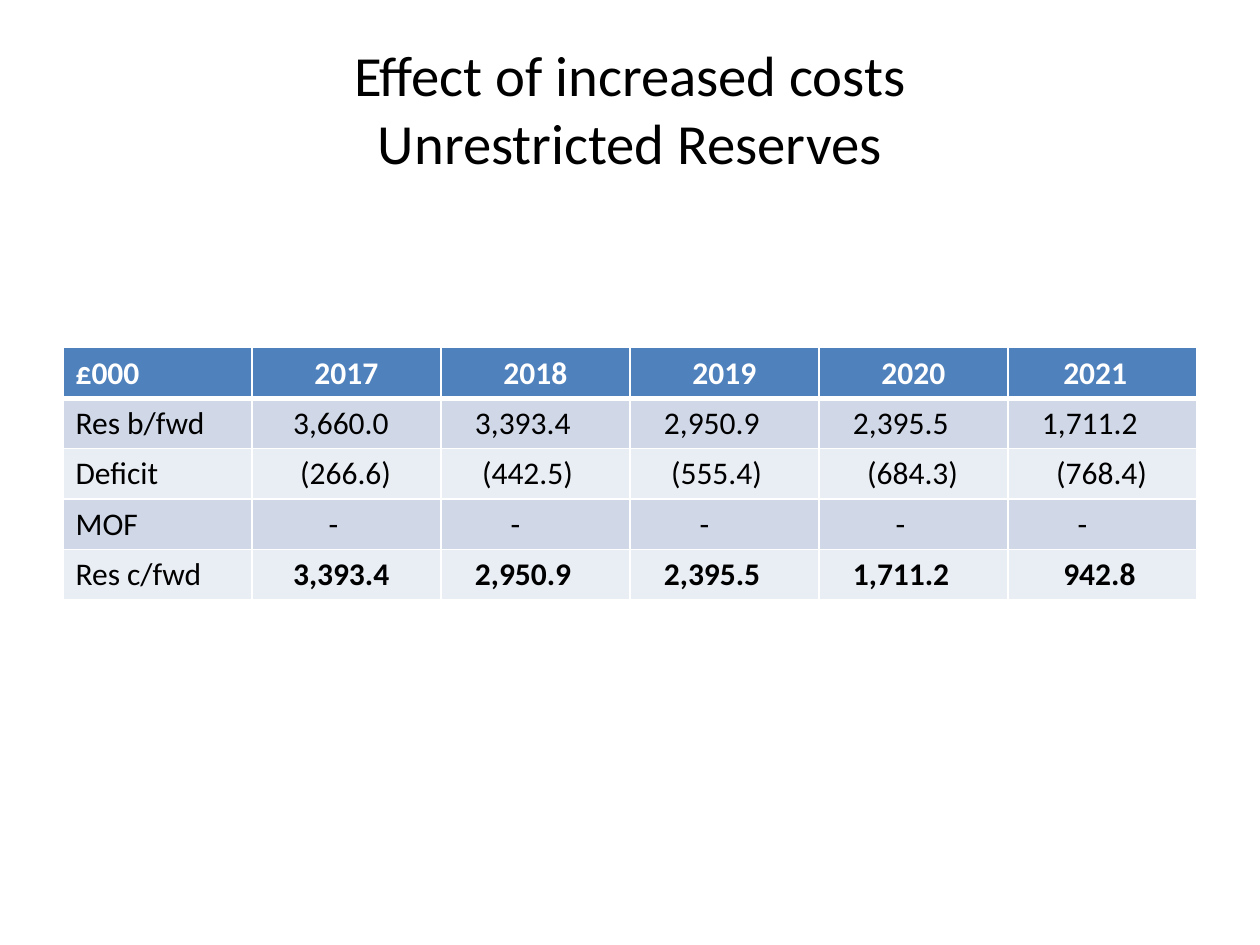
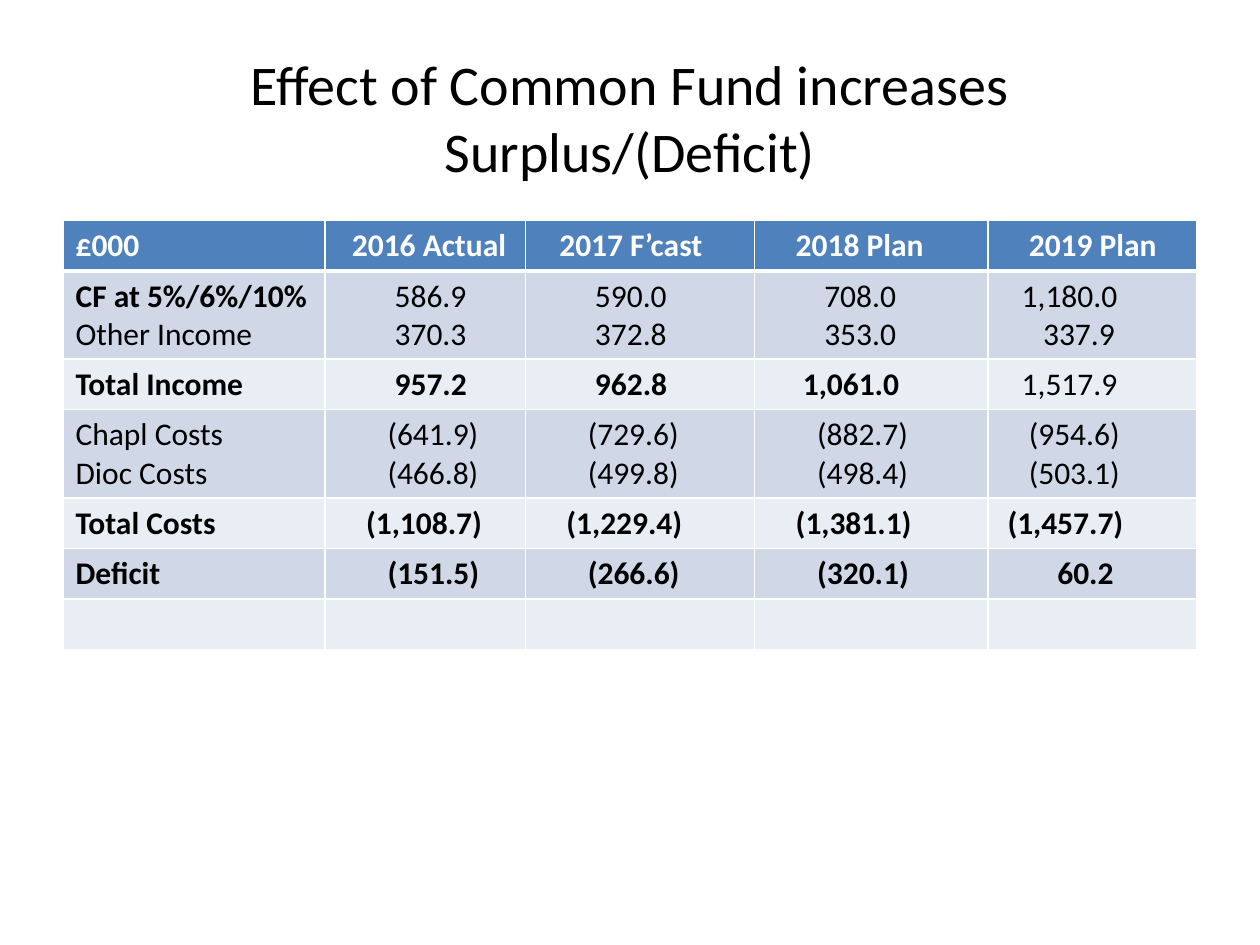
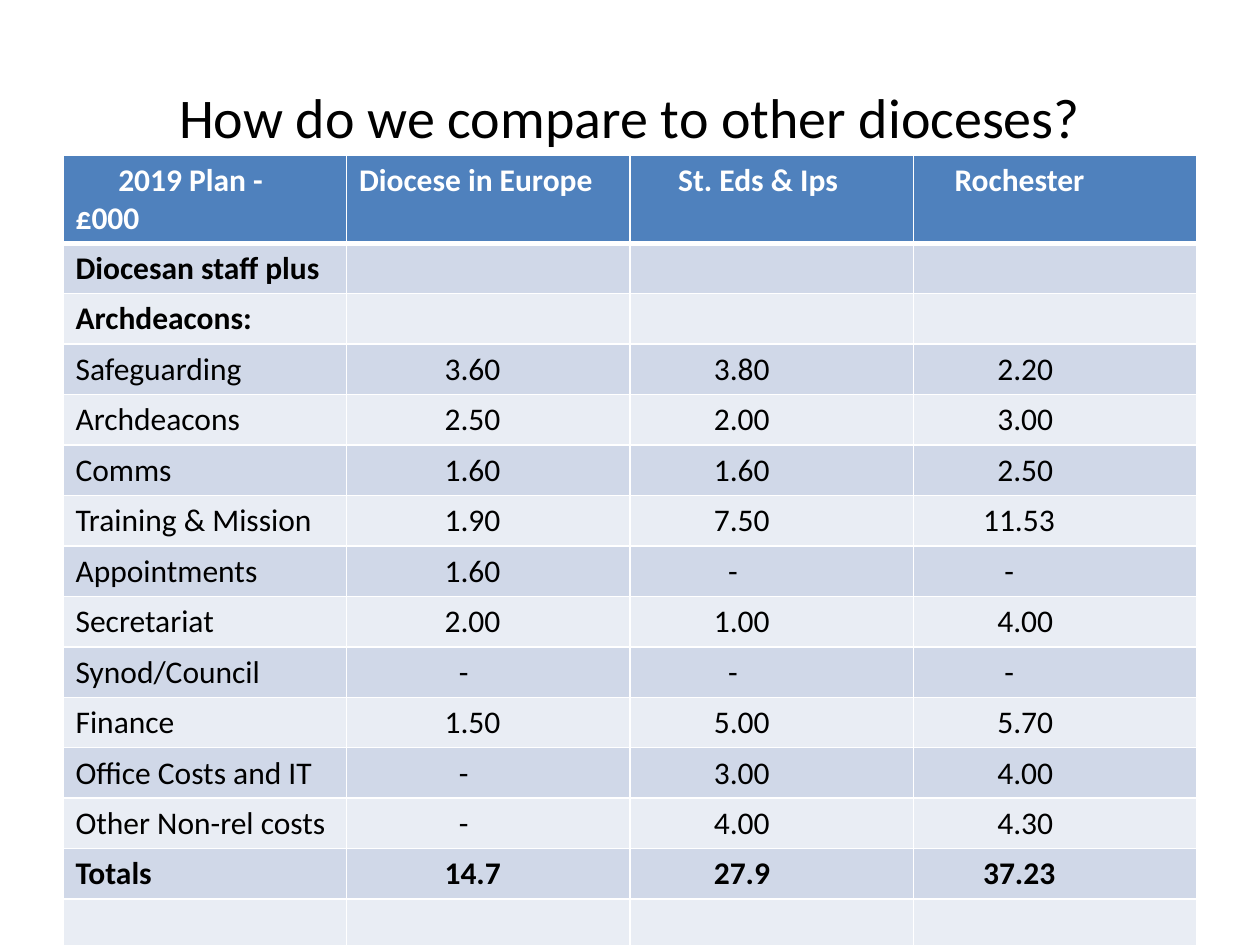
"""Build three finance slides: reserves, surplus or deficit, and a comparison of dioceses."""
import pptx
import pptx.util
import pptx.dml.color
import pptx.enum.text
import pptx.oxml.ns
import lxml.etree

Inches = pptx.util.Inches
Pt = pptx.util.Pt
RGB = pptx.dml.color.RGBColor

BLACK = RGB(0x00, 0x00, 0x00)
WHITE = RGB(0xFF, 0xFF, 0xFF)
BLUE = RGB(0x4F, 0x81, 0xBD)
BANDS = [RGB(0xE9, 0xED, 0xF4), RGB(0xD0, 0xD8, 0xE8)]
FONT = "Calibri"
STEP = Pt(4.07)
LINE = 0.3


def style(para, size, color, bold=False):
    para.font.name = FONT
    para.font.size = Pt(size)
    para.font.color.rgb = color
    para.font.bold = bold


def border(cell, side, width):
    props = cell._tc.get_or_add_tcPr()
    line = lxml.etree.SubElement(props, pptx.oxml.ns.qn("a:" + side), w=str(Pt(width)))
    fill = lxml.etree.SubElement(line, pptx.oxml.ns.qn("a:solidFill"))
    lxml.etree.SubElement(fill, pptx.oxml.ns.qn("a:srgbClr"), val=str(WHITE))


# Each row holds lines of (bold flags, indent steps, cell texts).
SLIDES = [
    {
        "title": "Effect of increased costs\vUnrestricted Reserves",
        "size": 32.4, "rise": 0.07, "top": 2.76, "cols": [1.5] * 6,
        "rows": [
            [("111111", [0, 7, 7, 7, 7, 6], "£000|2017|2018|2019|2020|2021")],
            [("000000", [0, 4, 3, 3, 3, 3], "Res b/fwd|3,660.0|3,393.4|2,950.9|2,395.5|1,711.2")],
            [("000000", [0, 5, 4, 4, 5, 5], "Deficit|(266.6)|(442.5)|(555.4)|(684.3)|(768.4)")],
            [("000000", [0, 9, 8, 8, 9, 8], "MOF|-|-|-|-|-")],
            [("011111", [0, 4, 3, 3, 3, 6], "Res c/fwd|3,393.4|2,950.9|2,395.5|1,711.2|942.8")],
        ],
    },
    {
        "title": "Effect of Common Fund increases\vSurplus/(Deficit)",
        "size": 32, "rise": 0, "top": 1.75, "cols": [2.08, 1.59, 1.82, 1.85, 1.66],
        "rows": [
            [("11111", [0, 2, 3, 4, 4], "£000|2016 Actual|2017 F’cast|2018 Plan|2019 Plan")],
            [("10000", [0, 8, 8, 8, 3], "CF at 5%/6%/10%|586.9|590.0|708.0|1,180.0"),
             ("00000", [0, 8, 8, 8, 6], "Other Income|370.3|372.8|353.0|337.9")],
            [("11110", [0, 8, 8, 5, 3], "Total Income|957.2|962.8|1,061.0|1,517.9")],
            [("00000", [0, 7, 7, 7, 4], "Chapl Costs|(641.9)|(729.6)|(882.7)|(954.6)"),
             ("00000", [0, 7, 7, 7, 4], "Dioc Costs|(466.8)|(499.8)|(498.4)|(503.1)")],
            [("11111", [0, 4, 4, 4, 1], "Total Costs|(1,108.7)|(1,229.4)|(1,381.1)|(1,457.7)")],
            [("11111", [0, 7, 7, 7, 8], "Deficit|(151.5)|(266.6)|(320.1)|60.2")],
            [("00000", [0] * 5, "||||")],
        ],
    },
    {
        "title": "How do we compare to other dioceses?",
        "size": 32, "rise": 0, "top": 1.23, "cols": [2.25] * 4,
        "rows": [
            [("1111", [6, 0, 5, 4], "2019 Plan - £000|Diocese in Europe|St. Eds & Ips|Rochester")],
            [("1000", [0] * 4, "Diocesan staff plus|||")],
            [("1000", [0] * 4, "Archdeacons:|||")],
            [("0000", [0, 12, 10, 10], "Safeguarding|3.60|3.80|2.20")],
            [("0000", [0, 12, 10, 10], "Archdeacons|2.50|2.00|3.00")],
            [("0000", [0, 12, 10, 10], "Comms|1.60|1.60|2.50")],
            [("0000", [0, 12, 10, 8], "Training & Mission|1.90|7.50|11.53")],
            [("0000", [0, 12, 12, 11], "Appointments|1.60|-|-")],
            [("0000", [0, 12, 10, 10], "Secretariat|2.00|1.00|4.00")],
            [("0000", [0, 14, 12, 11], "Synod/Council|-|-|-")],
            [("0000", [0, 12, 10, 10], "Finance|1.50|5.00|5.70")],
            [("0000", [0, 14, 10, 10], "Office Costs and IT|-|3.00|4.00")],
            [("0000", [0, 14, 10, 10], "Other Non-rel costs|-|4.00|4.30")],
            [("1111", [0, 12, 10, 8], "Totals|14.7|27.9|37.23")],
            [("0000", [0] * 4, "|||")],
        ],
    },
]

deck = pptx.Presentation()
deck.slide_width = Inches(10)
deck.slide_height = Inches(7.5)

for data in SLIDES:
    slide = deck.slides.add_slide(deck.slide_layouts[6])
    title = slide.shapes.add_textbox(Inches(0.5), Inches(0.3 - data["rise"]), Inches(9), Inches(1.25))
    frame = title.text_frame
    frame.word_wrap = True
    frame.vertical_anchor = pptx.enum.text.MSO_ANCHOR.MIDDLE
    frame.text = data["title"]
    frame.paragraphs[0].alignment = pptx.enum.text.PP_ALIGN.CENTER
    style(frame.paragraphs[0], data["size"], BLACK)

    rows, cols = data["rows"], data["cols"]
    tall = [0.1 + LINE * len(lines) for lines in rows]
    table = slide.shapes.add_table(len(rows), len(cols), Inches(0.5), Inches(data["top"]),
                                   Inches(9), Inches(sum(tall))).table
    for col, width in zip(table.columns, cols):
        col.width = Inches(width)
    for r, lines in enumerate(rows):
        table.rows[r].height = Inches(tall[r])
        for c in range(len(cols)):
            cell = table.cell(r, c)
            cell.text = "\n".join(text.split("|")[c] for _, _, text in lines)
            for para, (bold, gaps, _) in zip(cell.text_frame.paragraphs, lines):
                style(para, 18, BLACK if r else WHITE, bold[c] == "1")
                if gaps[c]:
                    para._p.get_or_add_pPr().set("indent", str(gaps[c] * STEP))
            for side in ("lnL", "lnR", "lnT", "lnB"):
                thick = (r == 0 and side == "lnB") or (r == 1 and side == "lnT")
                border(cell, side, 3 if thick else 1)
            cell.fill.solid()
            cell.fill.fore_color.rgb = BANDS[r % 2] if r else BLUE

deck.save("out.pptx")
